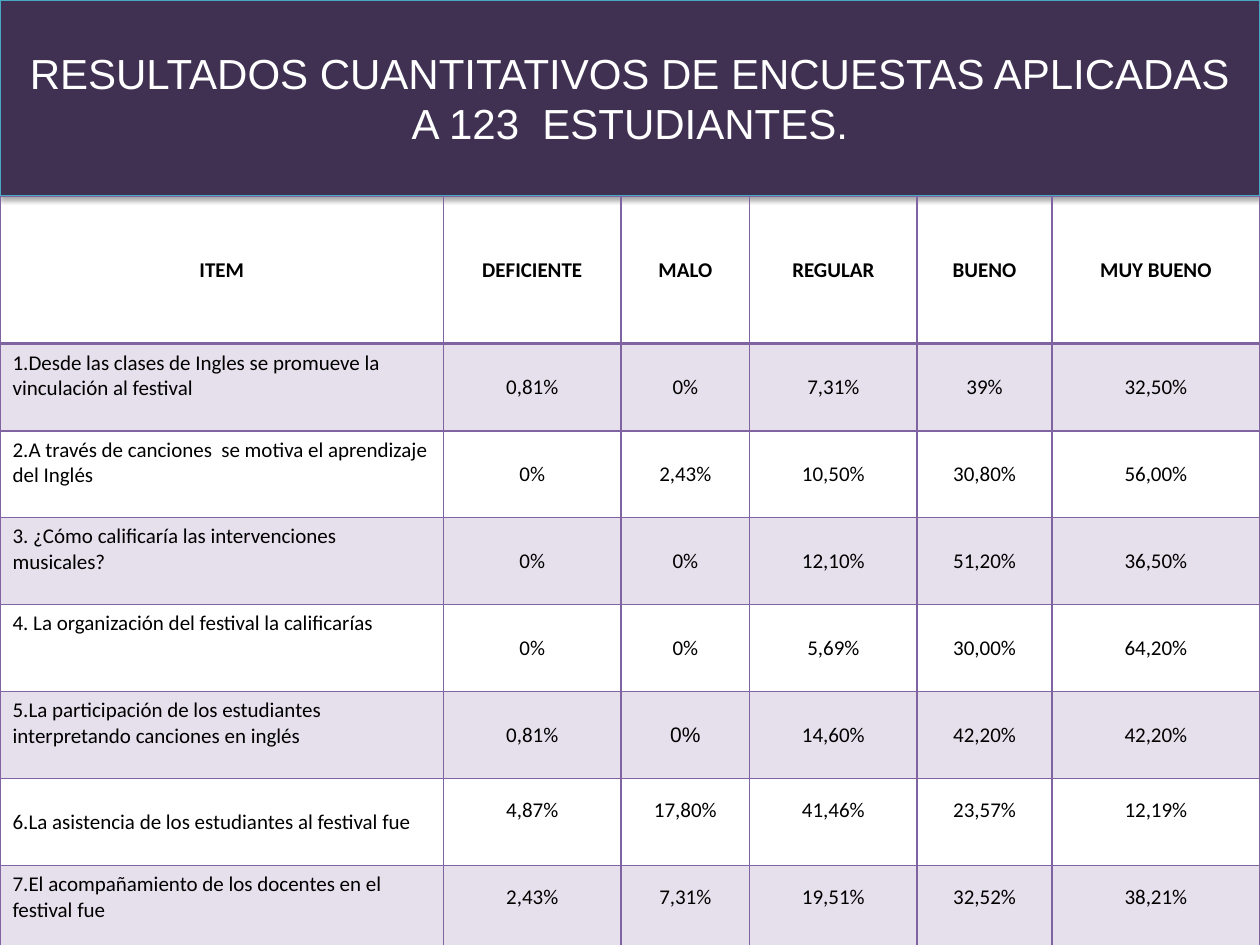
from dataclasses import dataclass

from lxml import etree
from pptx import Presentation
from pptx import util as u
from pptx.dml.color import RGBColor
from pptx.enum import shapes, text
from pptx.oxml import ns


@dataclass(frozen=True)
class Theme:
    banner: str = "403152"
    banner_edge: str = "46AAC5"
    grid: str = "8064A2"
    shadow: str = "000000"
    ink: str = "000000"
    light: str = "FFFFFF"
    title_font: str = "Arial"
    table_font: str = "Calibri"
    title_size: int = 24
    table_size: int = 12


THEME = Theme()
TITLE = "RESULTADOS CUANTITATIVOS DE ENCUESTAS APLICADAS A 123  ESTUDIANTES."
HEADINGS = ["ITEM", "DEFICIENTE", "MALO", "REGULAR", "BUENO", "MUY BUENO"]
RESULTS = [
    ["1.Desde las clases de Ingles se promueve la vinculación al festival",
     "0,81%", "0%", "7,31%", "39%", "32,50%"],
    ["2.A través de canciones  se motiva el aprendizaje del Inglés",
     "0%", "2,43%", "10,50%", "30,80%", "56,00%"],
    ["3. ¿Cómo calificaría las intervenciones musicales?",
     "0%", "0%", "12,10%", "51,20%", "36,50%"],
    ["4. La organización del festival la calificarías",
     "0%", "0%", "5,69%", "30,00%", "64,20%"],
    ["5.La participación de los estudiantes interpretando canciones en inglés",
     "0,81%", "0%", "14,60%", "42,20%", "42,20%"],
    ["6.La asistencia de los estudiantes al festival fue",
     "4,87%", "17,80%", "41,46%", "23,57%", "12,19%"],
    ["7.El acompañamiento de los docentes en el festival fue",
     "2,43%", "7,31%", "19,51%", "32,52%", "38,21%"],
]
COLUMN_WIDTHS = [3.52, 1.41, 1.02, 1.33, 1.07, 1.65]
HEADING_HEIGHT, RESULT_HEIGHT = 1.17, 0.69
ATTENDANCE_ROW, SUPPORT_ROW = 6, 7
RAISED_MARGIN = 0.23
ARIAL_CELL = (5, 2)


def add_node(parent, tag, **attributes):
    return etree.SubElement(parent, ns.qn(tag), attributes)


def add_colour(parent, colour, alpha=100):
    node = add_node(parent, "a:srgbClr", val=colour)
    if alpha < 100:
        add_node(node, "a:alpha", val=str(alpha * 1000))


def write(frame, words, font, size, colour, align, bold=False):
    frame.text = words
    paragraph = frame.paragraphs[0]
    paragraph.alignment = align
    for run in paragraph.runs:
        run.font.name = font
        run.font.size = u.Pt(size)
        run.font.bold = bold
        run.font.color.rgb = RGBColor.from_string(colour)


def add_banner(slide, left, top, width, height):
    banner = slide.shapes.add_shape(
        shapes.MSO_SHAPE.RECTANGLE, *map(u.Inches, (left, top, width, height)))
    banner.fill.solid()
    banner.fill.fore_color.rgb = RGBColor.from_string(THEME.banner)
    banner.line.color.rgb = RGBColor.from_string(THEME.banner_edge)
    banner.line.width = u.Pt(0.75)
    banner.shadow.inherit = False
    effects = banner.element.spPr.find(ns.qn("a:effectLst"))
    shadow = add_node(effects, "a:outerShdw", blurRad=str(u.Pt(3.1)),
                      dist=str(u.Pt(1.8)), dir="5400000", rotWithShape="0")
    add_colour(shadow, THEME.shadow, 35)
    frame = banner.text_frame
    frame.word_wrap = True
    frame.vertical_anchor = text.MSO_ANCHOR.MIDDLE
    write(frame, TITLE, THEME.title_font, THEME.title_size, THEME.light,
          text.PP_ALIGN.CENTER)


def style_cell(cell, row):
    properties = cell._tc.get_or_add_tcPr()
    weights = {"a:lnL": 1, "a:lnR": 1,
               "a:lnT": 2 if row == 1 else 1, "a:lnB": 2 if row == 0 else 1}
    for tag, weight in weights.items():
        edge = add_node(properties, tag, w=str(u.Pt(weight)))
        add_colour(add_node(edge, "a:solidFill"), THEME.grid)
    if row % 2:
        add_colour(add_node(properties, "a:solidFill"), THEME.grid, 20)
    else:
        add_node(properties, "a:noFill")


def add_results(slide, left, top, width, height):
    rows = [HEADINGS] + RESULTS
    table = slide.shapes.add_table(
        len(rows), len(HEADINGS),
        *map(u.Inches, (left, top, width, height))).table
    table.first_row = table.horz_banding = False
    for column, share in zip(table.columns, COLUMN_WIDTHS):
        column.width = u.Inches(width * share / sum(COLUMN_WIDTHS))
    for r, values in enumerate(rows):
        table.rows[r].height = u.Inches(RESULT_HEIGHT if r else HEADING_HEIGHT)
        for c, value in enumerate(values):
            cell = table.cell(r, c)
            is_question = r > 0 and c == 0
            at_top = is_question and r != ATTENDANCE_ROW
            cell.vertical_anchor = (text.MSO_ANCHOR.TOP if at_top
                                    else text.MSO_ANCHOR.MIDDLE)
            if r in (ATTENDANCE_ROW, SUPPORT_ROW) and not is_question:
                cell.margin_bottom = u.Inches(RAISED_MARGIN)
            font = THEME.title_font if (r, c) == ARIAL_CELL else THEME.table_font
            align = text.PP_ALIGN.LEFT if is_question else text.PP_ALIGN.CENTER
            write(cell.text_frame, value, font, THEME.table_size, THEME.ink,
                  align, bold=r == 0)
            style_cell(cell, r)


def main():
    deck = Presentation()
    deck.slide_width, deck.slide_height = u.Inches(10), u.Inches(7.5)
    slide = deck.slides.add_slide(deck.slide_layouts[6])
    add_banner(slide, 0, 0, 10, 1.55)
    add_results(slide, 0, 1.56, 10, HEADING_HEIGHT + RESULT_HEIGHT * len(RESULTS))
    deck.save("out.pptx")


if __name__ == "__main__":
    main()
